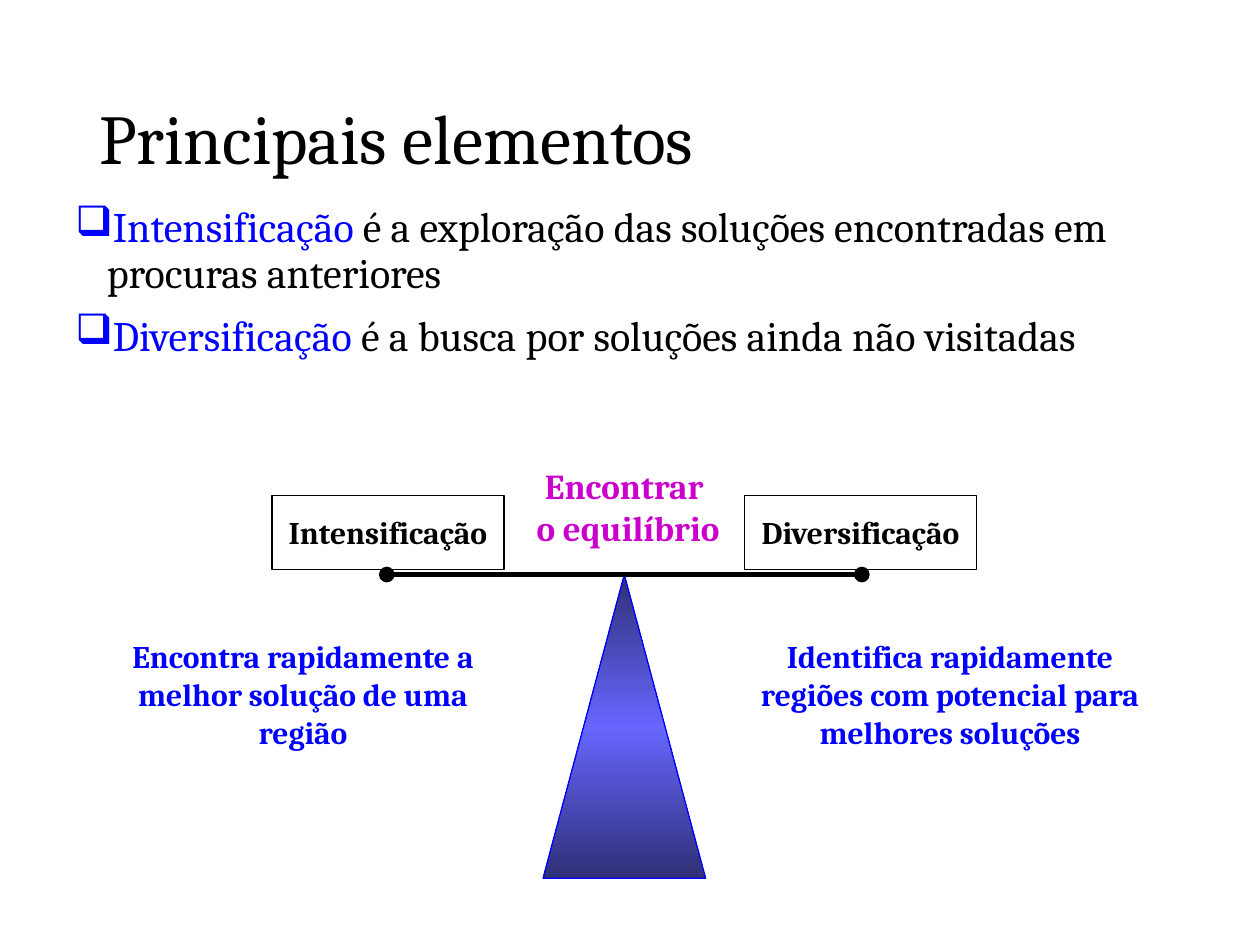
from copy import deepcopy

from lxml.etree import SubElement
from pptx import Presentation
from pptx.dml.color import RGBColor
from pptx.enum.shapes import MSO_CONNECTOR, MSO_SHAPE
from pptx.enum.text import MSO_ANCHOR, PP_ALIGN
from pptx.oxml.ns import qn
from pptx.util import Pt

EMU_PER_PX = 9144
COLOURS = {
    "black": "000000",
    "blue": "0000FF",
    "magenta": "CC00CC",
    "shade": "2F2F76",
    "glow": "6666FF",
}


def px(length):
    """Turn pixels (100 to the inch) into EMU."""
    return length * EMU_PER_PX


def colour(name):
    """Look up a named colour."""
    return RGBColor.from_string(COLOURS[name])


def set_format(target, values):
    """Set each attribute named in a dict of format values."""
    for name, value in values.items():
        setattr(target, name, value)


class SlideBuilder:
    """Holds the style and the current slide, and draws elements on it."""

    font = "Cambria"

    def __init__(self, page):
        """Start drawing on a page."""
        self.shapes = page.shapes

    def add_paras(self, box, paras, size, bold=False, bullet=None, margins=(10, 5), **para_format):
        """Fill a box with paragraphs of (text, colour) spans."""
        frame = box.text_frame
        side, edge = map(px, margins)
        set_format(frame, {"margin_left": side, "margin_right": side,
                           "margin_top": edge, "margin_bottom": edge})
        for index, spans in enumerate(paras):
            para = frame.add_paragraph() if index else frame.paragraphs[0]
            set_format(para, para_format)
            if index and bullet:
                para.space_before = Pt(10)
            if bullet:
                properties = para._p.get_or_add_pPr()
                properties.set("marL", str(px(25)))
                properties.set("indent", str(px(-25)))
                SubElement(properties, qn("a:buChar")).set("char", bullet)
            for text, tint in spans:
                span = para.add_run()
                span.text = text
                set_format(span.font, {"name": self.font, "size": Pt(size), "bold": bold})
                span.font.color.rgb = colour(tint)

    def text(self, place, paras, size, anchor=MSO_ANCHOR.TOP, wrap=True, **style):
        """Add a text box."""
        box = self.shapes.add_textbox(*map(px, place))
        set_format(box.text_frame, {"word_wrap": wrap, "vertical_anchor": anchor})
        self.add_paras(box, paras, size, **style)

    def outline(self, line, tint, width):
        """Style a line."""
        line.color.rgb = colour(tint)
        line.width = Pt(width)

    def shape(self, kind, place, tint):
        """Add an unfilled preset shape with a thin outline."""
        shape = self.shapes.add_shape(kind, *map(px, place))
        shape.shadow.inherit = False
        shape.fill.background()
        self.outline(shape.line, tint, 0.75)
        return shape

    def label(self, place, text):
        """Add an outlined rectangle with a centred bold label."""
        box = self.shape(MSO_SHAPE.RECTANGLE, place, "black")
        box.text_frame.vertical_anchor = MSO_ANCHOR.MIDDLE
        self.add_paras(box, [[(text, "black")]], 18, bold=True, margins=(2, 1),
                       alignment=PP_ALIGN.CENTER)

    def fulcrum(self, place, tints):
        """Add a triangle with an evenly stepped vertical gradient."""
        triangle = self.shape(MSO_SHAPE.ISOSCELES_TRIANGLE, place, "blue")
        fill = triangle.fill
        fill.gradient()
        fill.gradient_angle = 270
        stops = next(triangle._element.iter(qn("a:gsLst")))
        while len(stops) < len(tints):
            stops.append(deepcopy(stops[0]))
        for index, (stop, tint) in enumerate(zip(fill.gradient_stops, tints)):
            stop.color.rgb = colour(tint)
            stop.position = index / (len(tints) - 1)

    def beam(self, ends):
        """Add a thick line with round ends."""
        beam = self.shapes.add_connector(MSO_CONNECTOR.STRAIGHT, *map(px, ends))
        self.outline(beam.line, "black", 3)
        stroke = next(beam._element.iter(qn("a:ln")))
        for end in ("a:headEnd", "a:tailEnd"):
            SubElement(stroke, qn(end)).set("type", "oval")
        SubElement(beam._element.spPr, qn("a:effectLst"))


def main():
    """Build the slide and save it."""
    deck = Presentation()
    set_format(deck, {"slide_width": px(1000), "slide_height": px(750)})
    builder = SlideBuilder(deck.slides.add_slide(deck.slide_layouts[6]))
    centred = {"bold": True, "alignment": PP_ALIGN.CENTER}

    builder.text((69, 40, 862, 145), [[("Principais elementos", "black")]], 40,
                 anchor=MSO_ANCHOR.MIDDLE, line_spacing=0.9)
    definitions = {
        "Intensificação": " é a exploração das soluções encontradas em procuras anteriores",
        "Diversificação": " é a busca por soluções ainda não visitadas",
    }
    builder.text((50, 159, 900, 208),
                 [[(term, "blue"), (meaning, "black")] for term, meaning in definitions.items()],
                 24, bullet="❑", line_spacing=0.9)

    builder.text((411, 355, 175, 94),
                 [[("Encontrar ", "magenta")], [("o equilíbrio", "magenta")]],
                 20, anchor=MSO_ANCHOR.MIDDLE, wrap=False, **centred)
    for left, term in zip((216, 591), definitions):
        builder.label((left, 393, 184, 59), term)
    benefits = [
        (583, 342, "Identifica rapidamente regiões com potencial para melhores soluções"),
        (75, 331, "Encontra rapidamente a melhor solução de uma região"),
    ]
    for left, width, benefit in benefits:
        builder.text((left, 501, width, 100), [[(benefit, "blue")]], 18, **centred)
    builder.fulcrum((431, 456, 129, 241), ("shade", "glow", "shade"))
    builder.beam((307, 456, 684, 456))
    deck.save("out.pptx")


if __name__ == "__main__":
    main()
